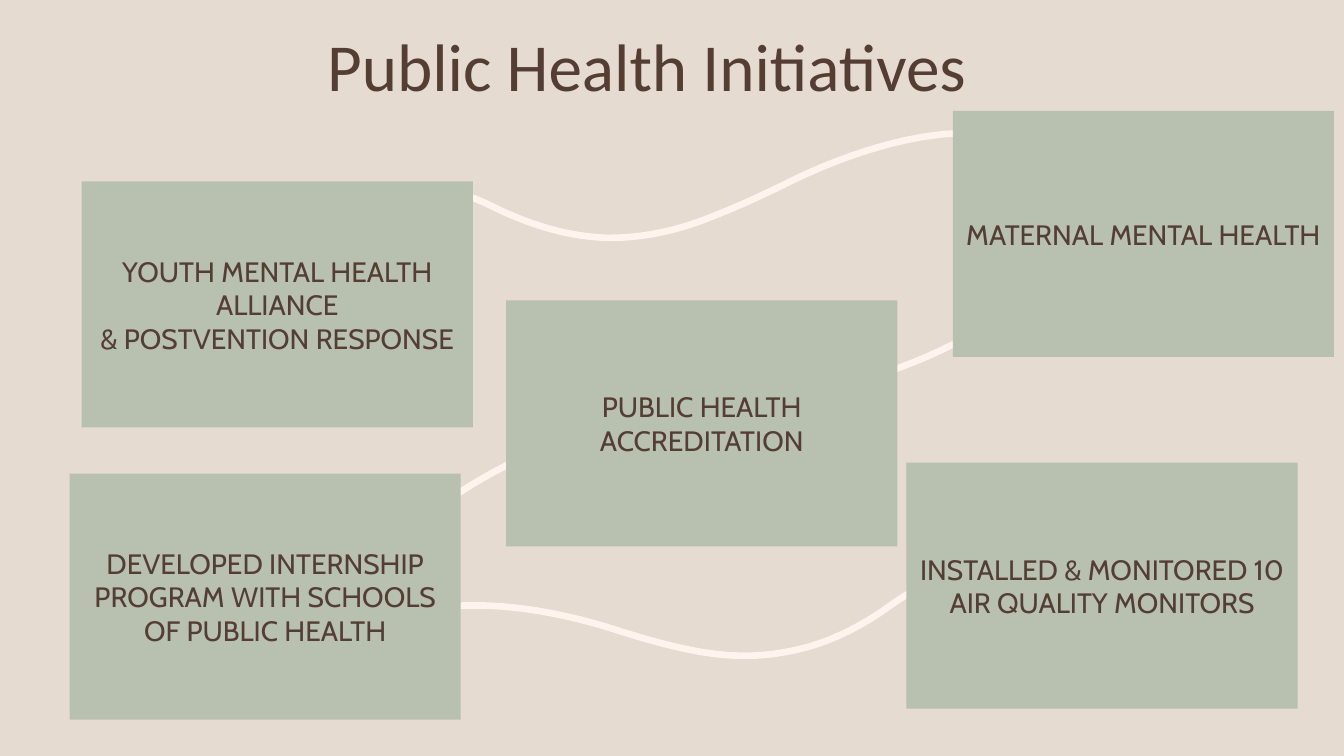
from pptx import Presentation
from pptx.dml.color import RGBColor
from pptx.enum.shapes import MSO_SHAPE
from pptx.enum.text import MSO_ANCHOR, PP_ALIGN
from pptx.util import Inches, Pt

COLORS = {"background": "E6DBD0", "card": "B8C0B0", "text": "543E34", "curve": "FEF3ED"}
CARD_HEIGHT = 2.44
CARD_WIDTH = 3.88
CURVE_STEPS = 16

CARDS = [
    (0.81, 1.8, CARD_WIDTH, ["YOUTH MENTAL HEALTH ALLIANCE", "& POSTVENTION RESPONSE"]),
    (9.45, 1.1, 3.78, ["MATERNAL MENTAL HEALTH"]),
    (5.02, 2.98, CARD_WIDTH, ["PUBLIC HEALTH ACCREDITATION"]),
    (0.69, 4.7, CARD_WIDTH, ["DEVELOPED INTERNSHIP PROGRAM WITH SCHOOLS OF PUBLIC HEALTH"]),
    (8.99, 4.59, CARD_WIDTH, ["INSTALLED & MONITORED 10 AIR QUALITY MONITORS"]),
]

CURVES = [
    [(8.33, 3.83), (9.13, 3.63), (9.85, 3.27), (10.47, 2.75)],
    [(5.84, 4.28), (5.09, 4.52), (4.45, 4.9), (3.89, 5.39)],
    [(3.07, 2.23), (3.5, 1.87), (3.98, 1.77), (4.49, 1.9),
     (4.66, 1.94), (4.81, 2.01), (4.97, 2.09),
     (5.3, 2.24), (5.65, 2.35), (6.04, 2.36),
     (6.37, 2.36), (6.7, 2.29), (7.01, 2.17),
     (7.37, 2.03), (7.57, 1.93), (7.78, 1.83),
     (8.01, 1.71), (9.4, 1.03), (10.27, 1.46)],
    [(9.2, 5.79), (9.04, 5.86), (8.91, 5.95), (8.77, 6.05),
     (8.48, 6.25), (8.15, 6.41), (7.78, 6.47),
     (7.46, 6.53), (7.14, 6.51), (6.81, 6.44),
     (6.45, 6.36), (6.24, 6.29), (6.02, 6.22),
     (5.78, 6.15), (4.34, 5.7), (3.47, 6.36)],
]


def color(name):
    """Return the named palette colour."""
    return RGBColor.from_string(COLORS[name])


def bezier_point(controls, t):
    """Return the point at t on a cubic curve, in slide units."""
    weights = ((1 - t) ** 3, 3 * t * (1 - t) ** 2, 3 * t ** 2 * (1 - t), t ** 3)
    return tuple(
        Inches(sum(weight * value for weight, value in zip(weights, axis)))
        for axis in zip(*controls)
    )


def add_curve(page, points):
    """Draw a smooth open line through joined cubic segments."""
    vertices = [
        bezier_point(points[start:start + 4], step / CURVE_STEPS)
        for start in range(0, len(points) - 1, 3)
        for step in range(1, CURVE_STEPS + 1)
    ]
    first_x, first_y = points[0]
    builder = page.shapes.build_freeform(Inches(first_x), Inches(first_y))
    builder.add_line_segments(vertices, close=False)
    curve = builder.convert_to_shape()
    curve.shadow.inherit = False
    curve.fill.background()
    curve.line.color.rgb = color("curve")
    curve.line.width = Pt(4.75)


def write_text(box, lines, font, size):
    """Fill a box with centred paragraphs."""
    frame = box.text_frame
    frame.word_wrap = True
    frame.vertical_anchor = MSO_ANCHOR.MIDDLE
    for index, line in enumerate(lines):
        para = frame.add_paragraph() if index else frame.paragraphs[0]
        para.alignment = PP_ALIGN.CENTER
        span = para.add_run()
        span.text = line
        span.font.name = font
        span.font.size = Pt(size)
        span.font.color.rgb = color("text")


def add_title(page, title):
    """Add the slide heading."""
    box = page.shapes.add_textbox(Inches(0.05), Inches(0.12), Inches(12.73), Inches(1.15))
    write_text(box, [title], "Calibri", 48)
    box.text_frame.paragraphs[0].line_spacing = 0.9


def add_card(page, left, top, width, lines):
    """Add one initiative card."""
    card = page.shapes.add_shape(
        MSO_SHAPE.RECTANGLE, Inches(left), Inches(top), Inches(width), Inches(CARD_HEIGHT)
    )
    card.shadow.inherit = False
    card.fill.solid()
    card.fill.fore_color.rgb = color("card")
    card.line.fill.background()
    write_text(card, lines, "Cabin", 20)


def main():
    """Build and save the slide."""
    deck = Presentation()
    deck.slide_width = Inches(13.33)
    deck.slide_height = Inches(7.5)
    page = deck.slides.add_slide(deck.slide_layouts[6])
    page.background.fill.solid()
    page.background.fill.fore_color.rgb = color("background")
    for points in CURVES:
        add_curve(page, points)
    add_title(page, "Public Health Initiatives")
    for card in CARDS:
        add_card(page, *card)
    deck.save("out.pptx")


if __name__ == "__main__":
    main()
